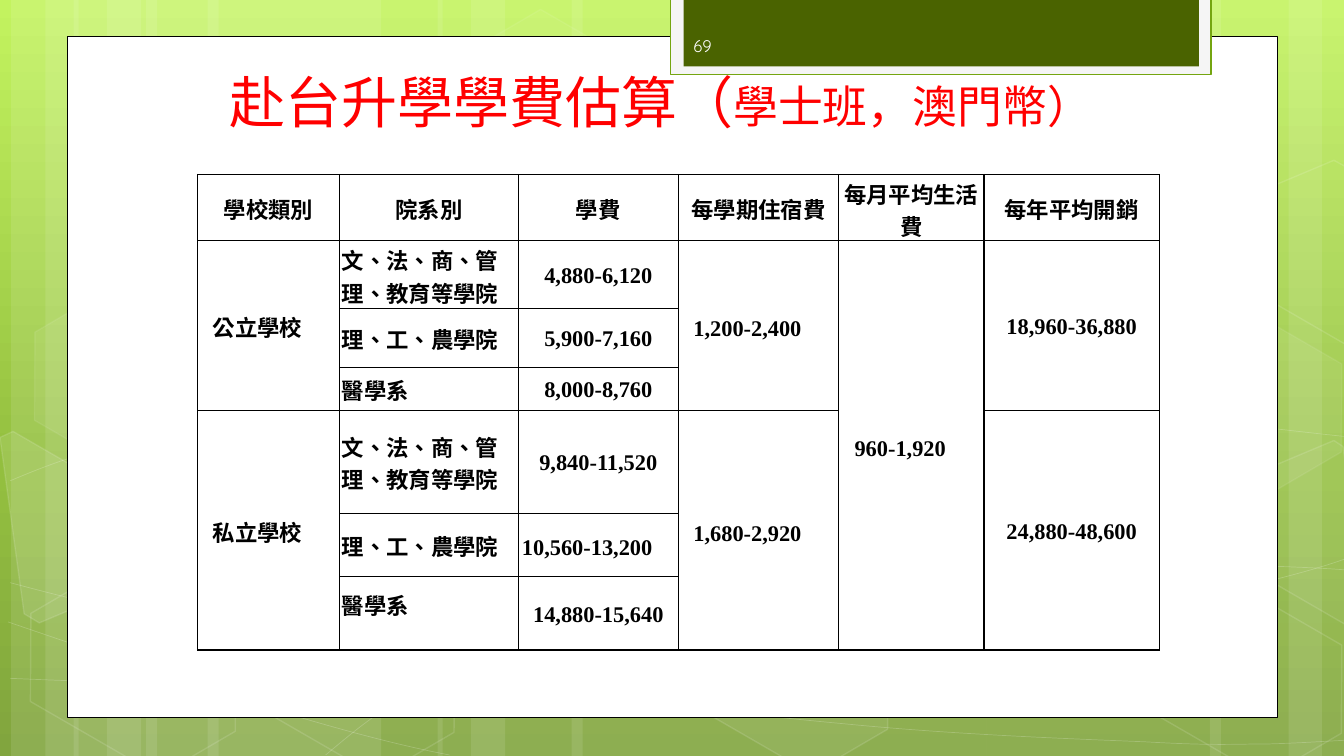
from copy import deepcopy

from pptx import Presentation
from pptx.dml.color import RGBColor
from pptx.enum.shapes import MSO_SHAPE
from pptx.enum.text import MSO_ANCHOR, PP_ALIGN
from pptx.oxml.ns import qn
from pptx.util import Pt
from lxml import etree

PX = 9144
RECT, HEXAGON = MSO_SHAPE.RECTANGLE, MSO_SHAPE.HEXAGON
MIDDLE, BOTTOM = MSO_ANCHOR.MIDDLE, MSO_ANCHOR.BOTTOM
LEFT, CENTER = PP_ALIGN.LEFT, PP_ALIGN.CENTER
WHITE, BLACK = "FFFFFF", "000000"
CJK, SERIF, SANS = "Noto Sans CJK SC", "Times New Roman", "Quicksand"

STRIPES = [(145, 233), (11, 67), (45, 111), (206, 233), (73, 67), (106, 111),
           (978, 233), (1278, 67), (1200, 111), (567, 411), (434, 67), (467, 111)]
CURVES = [
    [(10, 673), (82, 676), (154, 679), (254, 678), (354, 677), (477, 675), (610, 665),
     (744, 655), (933, 636), (1055, 617), (1178, 598), (1303, 568), (1343, 551)],
    [(10, 477), (48, 461), (86, 446), (162, 431), (238, 416), (345, 394), (463, 387),
     (582, 380), (725, 379), (872, 387), (1019, 395), (1263, 426), (1343, 434)],
    [(8, 617), (169, 672), (330, 727), (446, 749)],
    [(10, 578), (51, 589), (93, 600), (171, 616), (248, 631), (364, 656), (475, 673),
     (586, 690), (727, 708), (837, 718), (948, 729), (1066, 733), (1137, 736),
     (1207, 740), (1225, 738), (1260, 738), (1294, 737), (1319, 735), (1343, 734)],
    [(323, 749), (347, 729), (370, 709), (403, 691), (435, 673), (480, 653), (517, 639),
     (554, 625), (577, 619), (626, 609), (675, 599), (765, 585), (811, 578),
     (858, 571), (865, 571), (907, 569), (948, 566), (1013, 563), (1059, 562),
     (1105, 561), (1182, 562), (1182, 562), (1211, 562), (1241, 562), (1270, 562),
     (1295, 563), (1317, 564), (1329, 565), (1341, 566), (1337, 565), (1341, 566)],
]
HEXAGONS = [(445, 36, 4, 8), (662, 589, 6, 12), (15, 591, None, 12), (19, 312, 7, 8),
            (232, 592, None, 12), (1112, 593, None, 12), (1112, 314, 7, 8)]
CUT_HEXAGONS = [
    ([(0, 434), (13, 428), (115, 487), (127, 581), (39, 618), (24, 609)], 10),
    ([(1235, 474), (1323, 437), (1332, 443), (1357, 625), (1349, 628), (1247, 569)], 4),
    ([(1235, 196), (1323, 159), (1334, 165), (1357, 346), (1349, 350), (1247, 291)], None),
]
COLUMNS = [141, 177, 159, 159, 144, 174]
ROWS = [66, 67, 58, 43, 102, 63, 73]
ARTS, SCIENCE, MEDICINE = "文、法、商、管理、教育等學院", "理、工、農學院", "醫學系"
COSTS = [
    ["學校類別", "院系別", "學費", "每學期住宿費", "每月平均生活費", "每年平均開銷"],
    ["公立學校　", ARTS, "4,880-6,120", "1,200-2,400　", "960-1,920　", "18,960-36,880"],
    ["", SCIENCE, "5,900-7,160", "", "", ""],
    ["", MEDICINE, "8,000-8,760", "", "", ""],
    ["私立學校　", ARTS, "9,840-11,520", "1,680-2,920　", "", "24,880-48,600"],
    ["", SCIENCE, "10,560-13,200　", "", "", ""],
    ["", MEDICINE, "14,880-15,640", "", "", ""],
]
MERGES = [(row, column, row + 2) for row in (1, 4) for column in (0, 3, 5)] + [(1, 4, 6)]
GROUP_ENDS = (0, 3, 6)


def rgb(code):
    """Turn a hex string into a colour."""
    return RGBColor.from_string(code)


def fade(owner, route, percent):
    """Set the opacity of the colour found under owner."""
    if percent is not None:
        colour = owner.find("/".join(qn(tag) for tag in route))
        etree.SubElement(colour, qn("a:alpha")).set("val", str(percent * 1000))


def paint(shape, fill=None, opacity=None, line=None, width=1, line_opacity=None):
    """Give a shape its fill and outline, without shadow."""
    shape.shadow.inherit = False
    properties = shape._element.spPr
    if fill:
        shape.fill.solid()
        shape.fill.fore_color.rgb = rgb(fill)
        fade(properties, ("a:solidFill", "a:srgbClr"), opacity)
    else:
        shape.fill.background()
    if line:
        shape.line.color.rgb = rgb(line)
        shape.line.width = Pt(width)
        fade(properties, ("a:ln", "a:solidFill", "a:srgbClr"), line_opacity)
    else:
        shape.line.fill.background()


def block(slide, kind, *box):
    """Add a preset shape in a box given in px."""
    return slide.shapes.add_shape(kind, *(length * PX for length in box))


def outline(slide, points, closed):
    """Add a freeform through points given in px."""
    start, *others = [(x * PX, y * PX) for x, y in points]
    builder = slide.shapes.build_freeform(*start, scale=1.0)
    builder.add_line_segments(others, close=closed)
    return builder.convert_to_shape()


def curve(slide, knots):
    """Add an open chain of cubic curves, three knots to each."""
    shape = outline(slide, knots, False)
    segments = list(shape._element.iter(qn("a:lnTo")))
    for first in range(0, len(segments), 3):
        cubic = etree.Element(qn("a:cubicBezTo"))
        segments[first].addprevious(cubic)
        for segment in segments[first:first + 3]:
            cubic.append(segment[0])
            segment.getparent().remove(segment)
    return shape


def set_font(font, name, size, colour, bold=False):
    """Set the typeface, size and colour of a font."""
    font.name, font.size, font.bold = name, Pt(size), bold
    font.color.rgb = rgb(colour)


def draw_backdrop(slide, height):
    """Draw the green gradient with its stripes, curves and hexagons."""
    gradient = slide.background.fill
    gradient.gradient()
    gradient.gradient_angle = 270
    stop_list = slide._element.find(".//" + qn("a:gsLst"))
    stop_list.append(deepcopy(stop_list[0]))
    for stop, (position, code) in zip(gradient.gradient_stops,
                                      [(0, "C3F35F"), (0.62, "93BF3F"), (1, "81A53E")]):
        stop.position = position
        stop.color.rgb = rgb(code)
    for left, width in STRIPES:
        paint(block(slide, RECT, left, 0, width, height), WHITE, 10)
    for knots in CURVES:
        paint(curve(slide, knots), None, None, WHITE, 0.5, 20)
    for left, top, opacity, edge in HEXAGONS:
        hexagon = block(slide, HEXAGON, left, top, 234, 152)
        hexagon.adjustments[0] = 0.285
        hexagon.rotation = 30
        paint(hexagon, WHITE if opacity else None, opacity, WHITE, 1, edge)
    for points, opacity in CUT_HEXAGONS:
        paint(outline(slide, points, True), WHITE if opacity else None, opacity, WHITE, 1, 12)


def draw_label(slide, box, anchor, runs, font, colour):
    """Place one line of text made of (text, size) runs."""
    frame = slide.shapes.add_textbox(*(length * PX for length in box)).text_frame
    frame.word_wrap = True
    frame.vertical_anchor = anchor
    line = frame.paragraphs[0]
    set_font(line.font, font, runs[0][1], colour)
    for text, size in runs:
        run = line.add_run()
        run.text = text
        set_font(run.font, font, size, colour)
        etree.SubElement(run.font._element, qn("a:ea")).set("typeface", font)


def draw_page(slide, left, top, width, height):
    """Draw the white page with the green tab holding the slide number."""
    paint(block(slide, RECT, left, top, width, height), WHITE, None, BLACK, 0.5)
    paint(block(slide, RECT, left + 598, top - 38, 536, 76), "F5F5F5", None, "74A510", 1.25)
    paint(block(slide, RECT, left + 611, top - 38, 511, 68), "4A6300")
    draw_label(slide, (left + 611, top - 11, 194, 40), MIDDLE, [("69", 12)], SANS, "FEFEFE")


def draw_borders(cell, row, column):
    """Rule a cell, with thinner lines between the faculties of a school."""
    inner = column in (1, 2)
    widths = {"L": 1, "R": 1,
              "T": 0.5 if inner and row and row - 1 not in GROUP_ENDS else 1,
              "B": 0.5 if inner and row not in GROUP_ENDS else 1}
    for side, width in widths.items():
        edge = etree.SubElement(cell._tc.get_or_add_tcPr(), qn("a:ln" + side))
        edge.set("w", str(Pt(width)))
        ink = etree.SubElement(edge, qn("a:solidFill"))
        etree.SubElement(ink, qn("a:srgbClr")).set("val", BLACK)


def draw_costs(slide, left, top):
    """Draw the table of study costs."""
    box = (left, top, sum(COLUMNS), sum(ROWS))
    table = slide.shapes.add_table(len(ROWS), len(COLUMNS),
                                   *(length * PX for length in box)).table
    table.first_row = table.horz_banding = False
    for column, width in zip(table.columns, COLUMNS):
        column.width = width * PX
    for row, height in zip(table.rows, ROWS):
        row.height = height * PX
    for r, texts in enumerate(COSTS):
        for c, text in enumerate(texts):
            cell = table.cell(r, c)
            draw_borders(cell, r, c)
            cell.fill.background()
            cell.vertical_anchor = MIDDLE
            cell.margin_left = cell.margin_right = 2 * PX
            cell.margin_top, cell.margin_bottom = 3 * PX, 0
            cell.text = text
            entry = cell.text_frame.paragraphs[0]
            entry.alignment = LEFT if c == 1 and r else CENTER
            set_font(entry.font, SERIF, 16, BLACK, True)
            for run in entry.runs:
                run.font._element.set("lang", "zh-TW")
    table.cell(6, 1).margin_bottom = 20 * PX
    for first, column, last in MERGES:
        table.cell(first, column).merge(table.cell(last, column))


def main():
    """Build the slide and save it."""
    deck = Presentation()
    deck.slide_width, deck.slide_height = 1333 * PX, 750 * PX
    slide = deck.slides.add_slide(deck.slide_layouts[6])
    draw_backdrop(slide, 750)
    draw_page(slide, 67, 36, 1200, 676)
    draw_label(slide, (218, 30, 899, 109), BOTTOM,
               [("赴台升學學費估算（", 40), ("學士班，澳門幣）", 32)], CJK, "FF0000")
    draw_costs(slide, 196, 173)
    deck.save("out.pptx")


if __name__ == "__main__":
    main()
